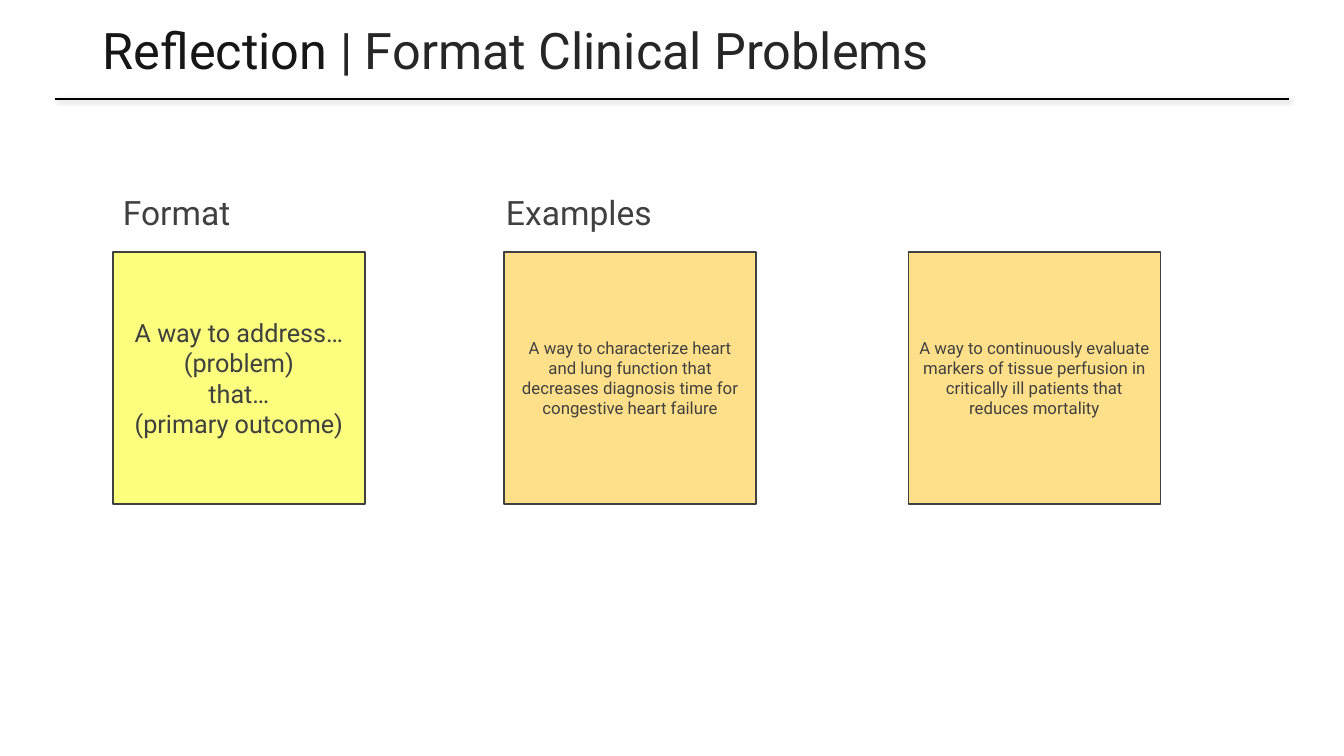
from dataclasses import dataclass

from lxml import etree
from pptx import Presentation
from pptx.dml.color import RGBColor
from pptx.enum.shapes import MSO_CONNECTOR, MSO_SHAPE
from pptx.enum.text import MSO_ANCHOR, PP_ALIGN
from pptx.oxml.ns import qn
from pptx.util import Inches, Pt

RECT = MSO_SHAPE.RECTANGLE
STRAIGHT = MSO_CONNECTOR.STRAIGHT
MIDDLE = MSO_ANCHOR.MIDDLE
CENTER = PP_ALIGN.CENTER


@dataclass(frozen=True)
class Theme:
    """Fonts, colours and type sizes of the slide."""
    font: str = "Roboto"
    black: str = "000000"
    lead: str = "171616"
    title: str = "262626"
    ink: str = "404040"
    shade: str = "757070"
    yellow: str = "FCFE7D"
    orange: str = "FFE08A"
    title_size: int = 36
    head_size: int = 24
    format_size: int = 18
    sample_size: int = 12


class Board:
    """Draws styled elements on the current slide."""

    def __init__(self, slide, theme):
        self.shapes = slide.shapes
        self.theme = theme

    def style(self, run, size, color):
        """Format one run."""
        run.font.name = self.theme.font
        run.font.size = Pt(size)
        run.font.color.rgb = RGBColor.from_string(color)

    def rule(self, left, right, top):
        """Draw the shadowed line below the title."""
        line = self.shapes.add_connector(
            STRAIGHT, Inches(left), Inches(top), Inches(right), Inches(top))
        line.line.color.rgb = RGBColor.from_string(self.theme.black)
        line.line.width = Pt(1.5)
        effects = etree.SubElement(line._element.spPr, qn("a:effectLst"))
        shadow = etree.SubElement(
            effects, qn("a:outerShdw"), blurRad=str(Pt(3)),
            dist=str(Pt(2)), dir="2700000", algn="tl", rotWithShape="0")
        color = etree.SubElement(
            shadow, qn("a:srgbClr"), val=self.theme.shade)
        etree.SubElement(color, qn("a:alpha"), val="40000")

    def text(self, left, top, width, height, parts, size):
        """Add a text box of coloured runs and return its frame."""
        box = self.shapes.add_textbox(
            Inches(left), Inches(top), Inches(width), Inches(height))
        frame = box.text_frame
        frame.word_wrap = True
        for words, color in parts:
            run = frame.paragraphs[0].add_run()
            run.text = words
            self.style(run, size, color)
        return frame

    def title(self, parts):
        """Add the slide title."""
        frame = self.text(0.89, 0.13, 11.5, 0.81, parts, self.theme.title_size)
        frame.margin_left = frame.margin_right = Inches(0.13)
        frame.margin_top = frame.margin_bottom = Inches(0.13)
        frame.paragraphs[0].line_spacing = 0.9

    def head(self, left, width, words):
        """Add a heading above the notes."""
        self.text(left, 1.85, width, 0.5, [(words, self.theme.ink)],
                  self.theme.head_size)

    def note(self, left, words, fill, size):
        """Add a square note with centred text."""
        side = Inches(2.5)
        note = self.shapes.add_shape(RECT, Inches(left), Inches(2.5), side, side)
        note.shadow.inherit = False
        note.fill.solid()
        note.fill.fore_color.rgb = RGBColor.from_string(fill)
        note.line.color.rgb = RGBColor.from_string(self.theme.ink)
        note.line.width = Pt(1)
        frame = note.text_frame
        frame.word_wrap = True
        frame.vertical_anchor = MIDDLE
        frame.text = words
        for para in frame.paragraphs:
            para.alignment = CENTER
            for run in para.runs:
                self.style(run, size, self.theme.ink)


def main():
    """Build and save the slide."""
    deck = Presentation()
    deck.slide_width, deck.slide_height = Inches(13.33), Inches(7.5)
    theme = Theme()
    board = Board(deck.slides.add_slide(deck.slide_layouts[6]), theme)

    board.rule(0.55, 12.78, 0.98)
    board.title([("Reflection", theme.lead),
                 (" | Format Clinical Problems", theme.title)])
    board.head(1.12, 2.57, "Format")
    board.head(4.92, 5.75, "Examples")
    board.note(1.12, "A way to address…\n(problem)\nthat…\n(primary outcome)",
               theme.yellow, theme.format_size)
    samples = [
        (5, "A way to characterize heart and lung function that decreases "
            "diagnosis time for congestive heart failure"),
        (9.01, "A way to continuously evaluate markers of tissue perfusion in "
               "critically ill patients that reduces mortality"),
    ]
    for left, words in samples:
        board.note(left, words, theme.orange, theme.sample_size)
    deck.save("out.pptx")


if __name__ == "__main__":
    main()
